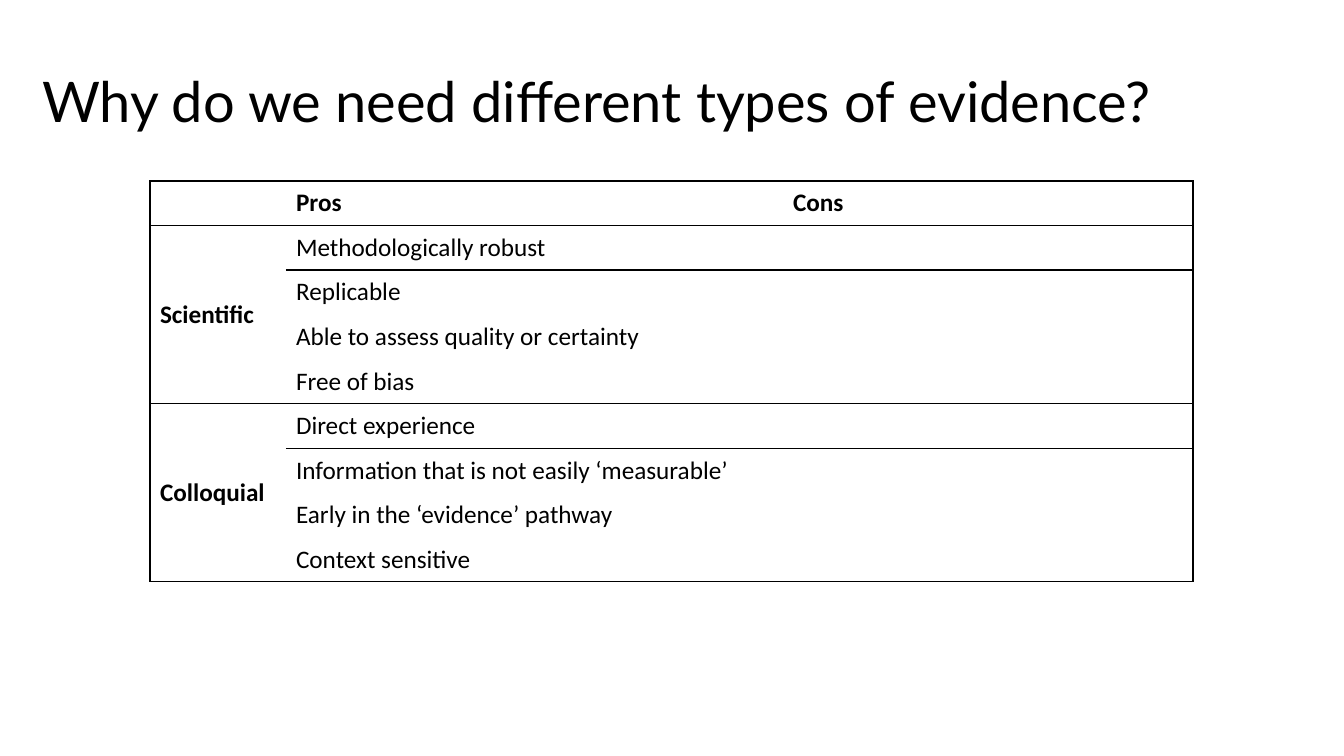
from lxml import etree
from pptx import Presentation
from pptx.dml.color import RGBColor
from pptx.enum.text import MSO_ANCHOR, PP_ALIGN
from pptx.oxml.ns import qn
from pptx.util import Pt

MIDDLE = MSO_ANCHOR.MIDDLE
LEFT = PP_ALIGN.LEFT
PX = 914400 / 100.8
THEME = {
    "ink": "000000",
    "title_font": "Lato",
    "title_size": 40,
    "table_font": "Calibri",
    "table_size": 18,
    "rule_width": 1,
}


def px(length):
    return round(length * PX)


def write(frame, text, font, size, bold=False):
    paragraph = frame.paragraphs[0]
    paragraph.alignment = LEFT
    run = paragraph.add_run()
    run.text = text
    run.font.name = THEME[font]
    run.font.size = Pt(THEME[size])
    run.font.bold = bold
    run.font.color.rgb = RGBColor.from_string(THEME["ink"])
    return paragraph


# Content
headings = ["Pros", "Cons"]
evidence = {
    "Scientific": [
        "Methodologically robust",
        "Replicable",
        "Able to assess quality or certainty",
        "Free of bias",
    ],
    "Colloquial": [
        "Direct experience",
        "Information that is not easily ‘measurable’",
        "Early in the ‘evidence’ pathway",
        "Context sensitive",
    ],
}
column_widths = [136, 497, 410]
row_count = 1 + sum(len(pros) for pros in evidence.values())
column_count = len(column_widths)

# Slide and title
deck = Presentation()
deck.slide_width, deck.slide_height = px(1344), px(756)
slide = deck.slides.add_slide(deck.slide_layouts[5])
title = slide.shapes.title
title.left, title.top, title.width, title.height = px(32), px(16), px(1279), px(177)
title.text_frame.word_wrap = True
title.text_frame.vertical_anchor = MIDDLE
heading = write(title.text_frame, "Why do we need different types of evidence?",
                "title_font", "title_size")
heading.line_spacing = 0.9

# Table grid
table = slide.shapes.add_table(row_count, column_count, px(150), px(181),
                               px(sum(column_widths)), px(401)).table
table.first_row = False
table.horz_banding = False
for column, width in zip(table.columns, column_widths):
    column.width = px(width)

# Headings and evidence groups
for column, text in enumerate(headings, start=1):
    write(table.cell(0, column).text_frame, text, "table_font", "table_size", True)

ruled_edges = {0, 1}
first = 1
for kind, pros in evidence.items():
    end = first + len(pros)
    table.cell(first, 0).merge(table.cell(end - 1, 0))
    write(table.cell(first, 0).text_frame, kind, "table_font", "table_size", True)
    for row, text in enumerate(pros, start=first):
        write(table.cell(row, 1).text_frame, text, "table_font", "table_size")
    ruled_edges |= {first + 1, end}
    first = end

# Cell fills and rules
for row in range(row_count):
    for column in range(column_count):
        cell = table.cell(row, column)
        cell.vertical_anchor = MIDDLE
        cell.fill.background()
        sides = {
            "a:lnL": column == 0,
            "a:lnR": column == column_count - 1,
            "a:lnT": row in ruled_edges,
            "a:lnB": row + 1 in ruled_edges,
        }
        properties = cell._tc.get_or_add_tcPr()
        for position, (side, ruled) in enumerate(sides.items()):
            line = etree.Element(qn(side), w=str(Pt(THEME["rule_width"])))
            if ruled:
                paint = etree.SubElement(line, qn("a:solidFill"))
                etree.SubElement(paint, qn("a:srgbClr"), val=THEME["ink"])
            else:
                etree.SubElement(line, qn("a:noFill"))
            properties.insert(position, line)

deck.save("out.pptx")
